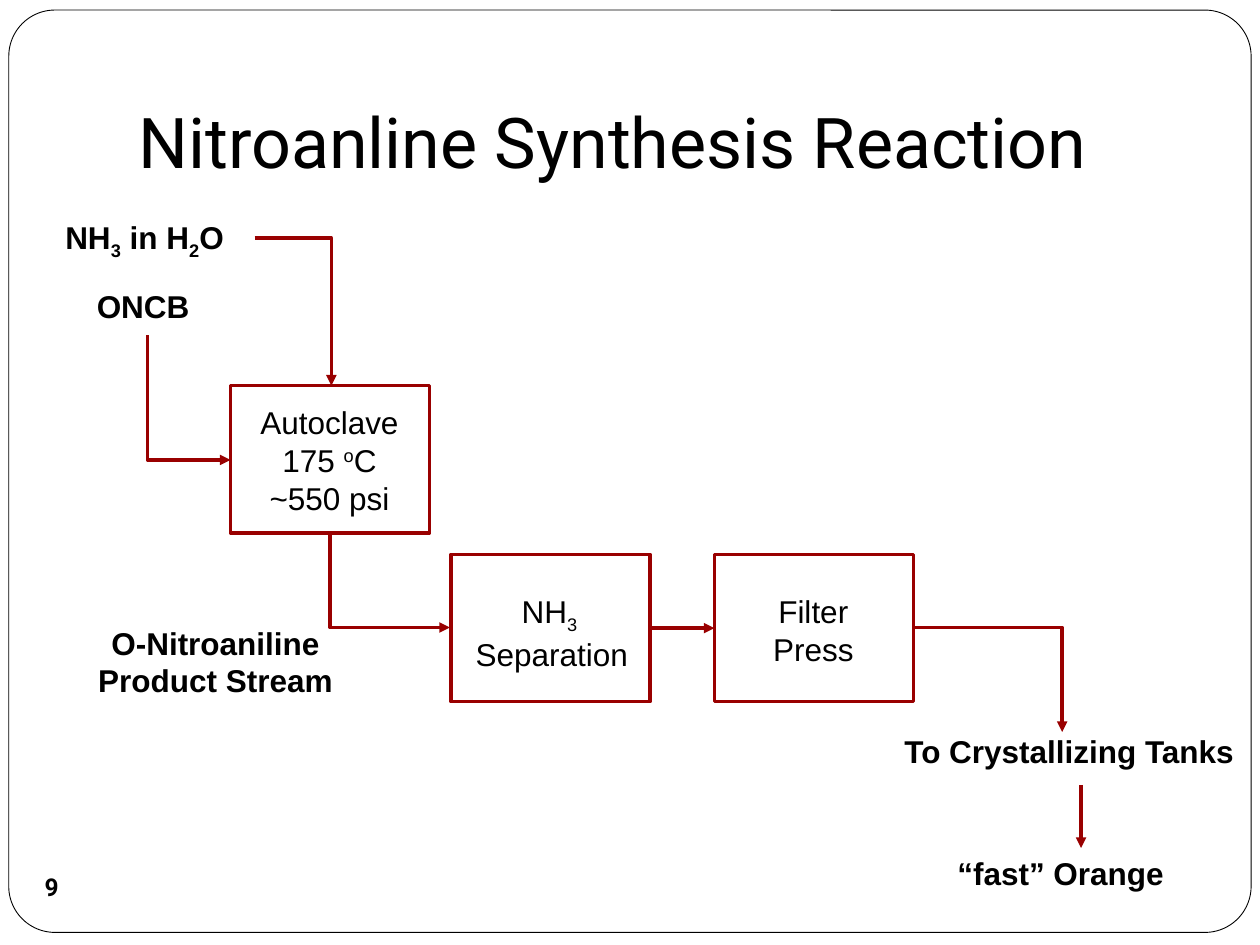
from lxml import etree
from pptx import Presentation
from pptx.dml.color import RGBColor
from pptx.enum.shapes import MSO_CONNECTOR as Connector, MSO_SHAPE as Shape
from pptx.enum.text import MSO_ANCHOR as Anchor, MSO_AUTO_SIZE as AutoSize, PP_ALIGN as Align
from pptx.oxml.ns import qn
from pptx.util import Pt

PX = 9144  # 100 px to the inch
COLORS = {"ink": "000000", "paper": "FFFFFF", "flow": "990000"}
UNIT_SIZE = (158, 117)


def color(name):
    return RGBColor.from_string(COLORS[name])


def emu(*lengths):
    return [length * PX for length in lengths]


def within(box, x, y):
    return box[0] + x, box[1] + y


def format_runs(paragraph, size, font, bold=False):
    for run in paragraph.runs:
        run.font.size = Pt(size)
        run.font.name = font
        run.font.bold = bold
        run.font.color.rgb = color("ink")


def add_text(slide, position, size, lines, bold=False, align=Align.LEFT, wrap=False):
    """Each line is a string or a list of (text, baseline percent) pairs."""
    text_frame = slide.shapes.add_textbox(*emu(*position, *size)).text_frame
    text_frame.word_wrap = wrap
    text_frame.auto_size = AutoSize.SHAPE_TO_FIT_TEXT
    for index, line in enumerate(lines):
        paragraph = text_frame.add_paragraph() if index else text_frame.paragraphs[0]
        paragraph.alignment = align
        if isinstance(line, str):
            paragraph.text = line
        else:
            for text, baseline in line:
                run = paragraph.add_run()
                run.text = text
                if baseline:
                    run.font._element.set("baseline", str(baseline * 1000))
        format_runs(paragraph, 18, "Arial", bold)


def add_unit(slide, position, text_offset, text_size, lines):
    """Outlined process unit with its centred caption."""
    unit = slide.shapes.add_shape(Shape.RECTANGLE, *emu(*position, *UNIT_SIZE))
    unit.shadow.inherit = False
    unit.fill.background()
    unit.line.color.rgb = color("flow")
    unit.line.width = Pt(2)
    add_text(slide, within(position, *text_offset), text_size, lines, align=Align.CENTER)
    return unit


def add_arrow(slide, start, end, kind=Connector.STRAIGHT):
    arrow = slide.shapes.add_connector(kind, *emu(*start, *end))
    arrow.line.color.rgb = color("flow")
    arrow.line.width = Pt(2)
    properties = arrow._element.spPr
    etree.SubElement(properties.find(qn("a:ln")), qn("a:tailEnd"), type="triangle")
    etree.SubElement(properties, qn("a:effectLst"))
    return arrow


def add_elbow_arrow(slide, start, end, down_first=False):
    """Arrow with one corner, running to the right and down."""
    arrow = add_arrow(slide, start, end, Connector.ELBOW)
    properties = arrow._element.spPr
    properties.find(qn("a:prstGeom")).set("prst", "bentConnector2")
    if down_first:
        width, height = arrow.width, arrow.height
        arrow.left += (width - height) // 2
        arrow.top += (height - width) // 2
        arrow.width, arrow.height = height, width
        transform = properties.find(qn("a:xfrm"))
        transform.set("rot", "16200000")
        transform.set("flipH", "1")


def add_frame(slide, box):
    frame = slide.shapes.add_shape(Shape.ROUNDED_RECTANGLE, *emu(*box))
    frame.adjustments[0] = 0.05
    frame.shadow.inherit = False
    frame.fill.solid()
    frame.fill.fore_color.rgb = color("paper")
    frame.line.color.rgb = color("ink")
    frame.line.width = Pt(0.5)
    slide.shapes._spTree.insert(2, frame._element)  # behind the title


def add_title(slide, box):
    title = slide.shapes.title
    title.left, title.top, title.width, title.height = emu(*box)
    text_frame = title.text_frame
    text_frame.text = "Nitroanline Synthesis Reaction"
    text_frame.auto_size = AutoSize.NONE
    text_frame.vertical_anchor = Anchor.BOTTOM
    text_frame.margin_bottom = 10 * PX
    text_frame.paragraphs[0].alignment = Align.LEFT
    format_runs(text_frame.paragraphs[0], 40, "Roboto")


def add_page_number(slide, box):
    badge = slide.shapes.add_shape(Shape.OVAL, *emu(*box))
    badge.shadow.inherit = False
    badge.fill.background()
    badge.line.fill.background()
    text_frame = badge.text_frame
    text_frame.text = "9"
    text_frame.word_wrap = False
    text_frame.vertical_anchor = Anchor.MIDDLE
    text_frame.margin_left = text_frame.margin_right = 0
    text_frame.margin_top = text_frame.margin_bottom = 0
    text_frame.paragraphs[0].alignment = Align.CENTER
    format_runs(text_frame.paragraphs[0], 14, "Roboto", bold=True)


def add_feeds(slide, box):
    ammonia = [("NH", 0), ("3", -25), (" in H", 0), ("2", -25), ("O", 0)]
    add_text(slide, within(box, 0, 0), (150, 40), [ammonia], bold=True)
    add_text(slide, within(box, 25, 55), (94, 40), ["ONCB"], bold=True)
    add_elbow_arrow(slide, within(box, 160, 21), within(box, 221, 138))
    add_elbow_arrow(slide, within(box, 75, 98), within(box, 141, 197), down_first=True)


def add_process(slide, box):
    add_unit(slide, within(box, 0, 0), (13, 9), (131, 101),
             ["Autoclave", [("175 ", 0), ("o", 30), ("C", 0)], "~550 psi"])
    separation = add_unit(slide, within(box, 175, 134), (9, 25), (142, 71),
                          [[("NH", 0), ("3 ", -25)], "Separation"])
    press = add_unit(slide, within(box, 384, 134), (36, 25), (85, 71), ["Filter", "Press"])
    add_elbow_arrow(slide, within(box, 79, 117), within(box, 174, 192), down_first=True)
    transfer = add_arrow(slide, within(box, 333, 192), within(box, 384, 192))
    transfer.begin_connect(separation, 3)
    transfer.end_connect(press, 1)
    add_text(slide, within(box, -133, 184), (242, 71), ["O-Nitroaniline Product Stream"],
             bold=True, align=Align.CENTER, wrap=True)


def add_product(slide, box):
    add_elbow_arrow(slide, within(box, 17, 0), within(box, 135, 83))
    add_text(slide, within(box, 0, 78), (284, 40), ["To Crystallizing Tanks"], bold=True)
    add_arrow(slide, within(box, 150, 125), within(box, 150, 175))
    add_text(slide, within(box, 42, 175), (200, 40), ["“fast” Orange"], bold=True, wrap=True)


def main():
    presentation = Presentation()
    presentation.slide_width, presentation.slide_height = emu(1000, 750)
    slide = presentation.slides.add_slide(presentation.slide_layouts[5])
    add_frame(slide, (7, 8, 986, 732))
    add_title(slide, (100, 30, 850, 125))
    add_page_number(slide, (16, 679, 50, 50))
    add_feeds(slide, (42, 168, 221, 197))
    add_process(slide, (183, 306, 542, 251))
    add_product(slide, (708, 498, 284, 215))
    presentation.save("out.pptx")


if __name__ == "__main__":
    main()
